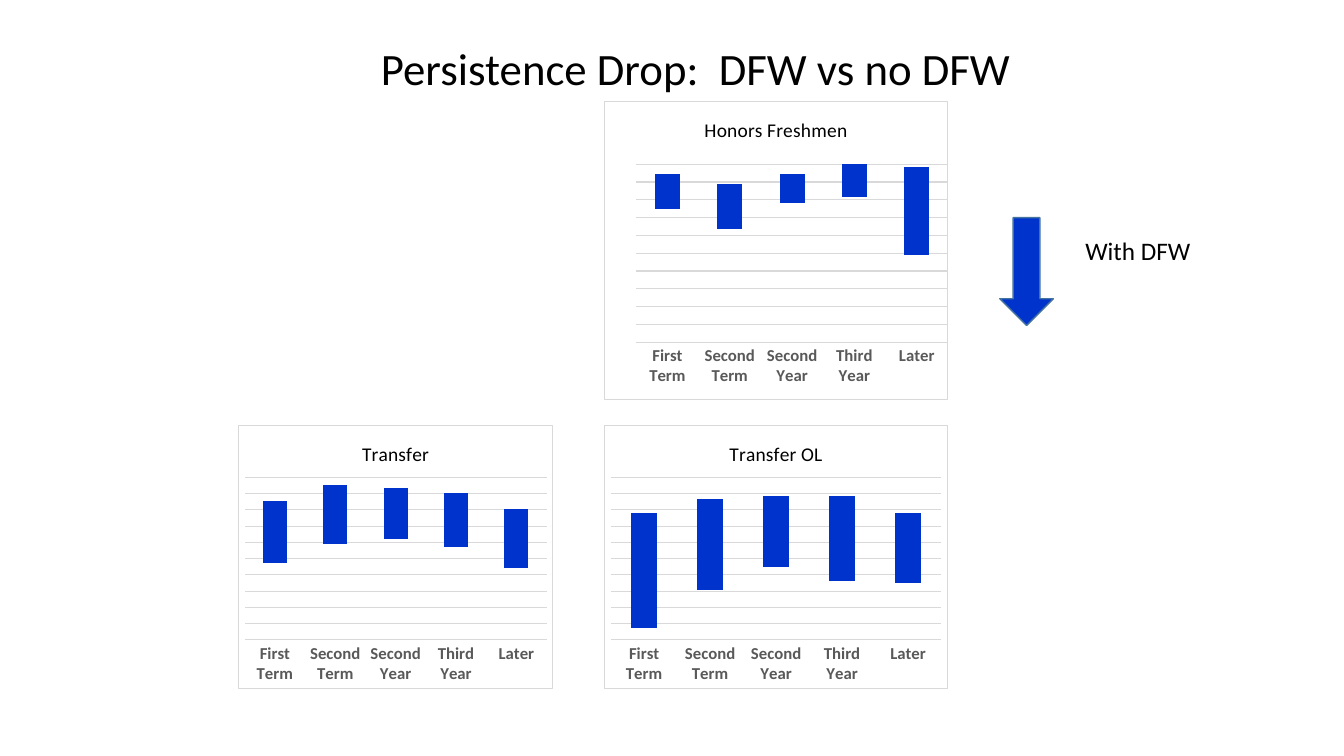
"""Build the slide comparing persistence drops with and without DFW."""
from lxml import etree
from pptx import Presentation
from pptx.chart.data import CategoryChartData
from pptx.dml.color import RGBColor
from pptx.enum.chart import XL_CHART_TYPE, XL_TICK_LABEL_POSITION, XL_TICK_MARK
from pptx.enum.shapes import MSO_SHAPE
from pptx.enum.text import MSO_AUTO_SIZE
from pptx.oxml import parse_xml
from pptx.oxml.ns import nsdecls, qn
from pptx.util import Pt

COLORS = {
    "background": "FFFFFF",
    "text": "000000",
    "label": "595959",
    "grid": "D9D9D9",
    "drop": "0033CC",
    "arrow_line": "43739E",
}
FONT = "Calibri"
TERMS = ["First Term", "Second Term", "Second Year", "Third Year", "Later"]
CHARTS = [
    ("Honors Freshmen", (431.3, 72, 246.2, 213.8), (55, 110),
     [96, 90, 98, 100, 82], [11, 14, 9, 10, 27]),
    ("Transfer", (169.9, 303.8, 225.4, 188.6), (62, 123),
     [91, 98, 100, 97, 89], [23, 22, 19, 20, 22]),
    ("Transfer OL", (431.3, 303.8, 246.2, 188.6), (69, 138),
     [74, 90, 100, 94, 93], [49, 39, 30, 36, 30]),
]
LABELS = [
    ("Persistence Drop:  DFW vs no DFW", (265, 25.9, 468.7, 46.1), 32),
    ("With DFW", (768.2, 164.2, 90.7, 28.8), 18),
]
HONORS_PLOT = {"x": 0.093, "y": 0.211, "w": 0.907, "h": 0.597}


def style_font(font, size, color, bold=False):
    font.name = FONT
    font.size = Pt(size)
    font.bold = bold
    font.color.rgb = RGBColor.from_string(COLORS[color])


def style_line(line, color, width):
    line.color.rgb = RGBColor.from_string(COLORS[color])
    line.width = Pt(width)


presentation = Presentation()
presentation.slide_width = Pt(960)
presentation.slide_height = Pt(540)
slide = presentation.slides.add_slide(presentation.slide_layouts[6])
slide.background.fill.solid()
slide.background.fill.fore_color.rgb = RGBColor.from_string(COLORS["background"])

for title, box, (minimum, maximum), base_values, drop_values in CHARTS:
    data = CategoryChartData()
    data.categories = TERMS
    data.add_series("Series 1", base_values)
    data.add_series("Series 2", drop_values)
    chart = slide.shapes.add_chart(
        XL_CHART_TYPE.COLUMN_STACKED, *map(Pt, box), data
    ).chart
    style_font(chart.font, 10, "text")
    chart.has_legend = False
    chart.has_title = True
    chart.chart_title.include_in_layout = False
    chart.chart_title.text_frame.text = title
    style_font(chart.chart_title.text_frame.paragraphs[0].runs[0].font, 14, "text")

    plot = chart.plots[0]
    plot.gap_width = 150
    plot.overlap = 100
    plot.vary_by_categories = False
    base, drop = plot.series
    base.format.fill.background()
    base.format.line.fill.background()
    drop.format.fill.solid()
    drop.format.fill.fore_color.rgb = RGBColor.from_string(COLORS["drop"])
    drop.format.line.fill.background()

    category_axis = chart.category_axis
    category_axis.major_tick_mark = XL_TICK_MARK.NONE
    style_font(category_axis.tick_labels.font, 12, "label", bold=True)
    style_line(category_axis.format.line, "grid", 0.75)

    value_axis = chart.value_axis
    value_axis.minimum_scale = minimum
    value_axis.maximum_scale = maximum
    value_axis.major_unit = round((maximum - minimum) / 10, 1)
    value_axis.major_tick_mark = XL_TICK_MARK.NONE
    value_axis.tick_label_position = XL_TICK_LABEL_POSITION.NONE
    style_font(value_axis.tick_labels.font, 9, "label")
    value_axis.format.line.fill.background()
    style_line(value_axis.major_gridlines.format.line, "grid", 0.75)

    chart_space = chart.element
    chart_space.find(qn("c:chart")).addnext(parse_xml(
        f'<c:spPr {nsdecls("c", "a")}>'
        f'<a:solidFill><a:srgbClr val="{COLORS["background"]}"/></a:solidFill>'
        f'<a:ln w="{Pt(0.75)}"><a:solidFill><a:srgbClr val="{COLORS["grid"]}"/>'
        '</a:solidFill></a:ln></c:spPr>'
    ))
    if title == "Honors Freshmen":
        plot_area = chart_space.find(".//" + qn("c:plotArea"))
        for layout in plot_area.findall(qn("c:layout")):
            plot_area.remove(layout)
        layout = etree.Element(qn("c:layout"))
        plot_area.insert(0, layout)
        manual = etree.SubElement(layout, qn("c:manualLayout"))
        settings = {"layoutTarget": "inner", "xMode": "edge", "yMode": "edge"}
        for name, value in (settings | HONORS_PLOT).items():
            etree.SubElement(manual, qn(f"c:{name}")).set("val", str(value))

arrow = slide.shapes.add_shape(
    MSO_SHAPE.DOWN_ARROW, Pt(714.2), Pt(155.5), Pt(38.2), Pt(77)
)
arrow.shadow.inherit = False
arrow.fill.solid()
arrow.fill.fore_color.rgb = RGBColor.from_string(COLORS["drop"])
style_line(arrow.line, "arrow_line", 1)

for text, box, size in LABELS:
    text_frame = slide.shapes.add_textbox(*map(Pt, box)).text_frame
    text_frame.word_wrap = False
    text_frame.auto_size = MSO_AUTO_SIZE.SHAPE_TO_FIT_TEXT
    text_frame.text = text
    style_font(text_frame.paragraphs[0].runs[0].font, size, "text")

presentation.save("out.pptx")
